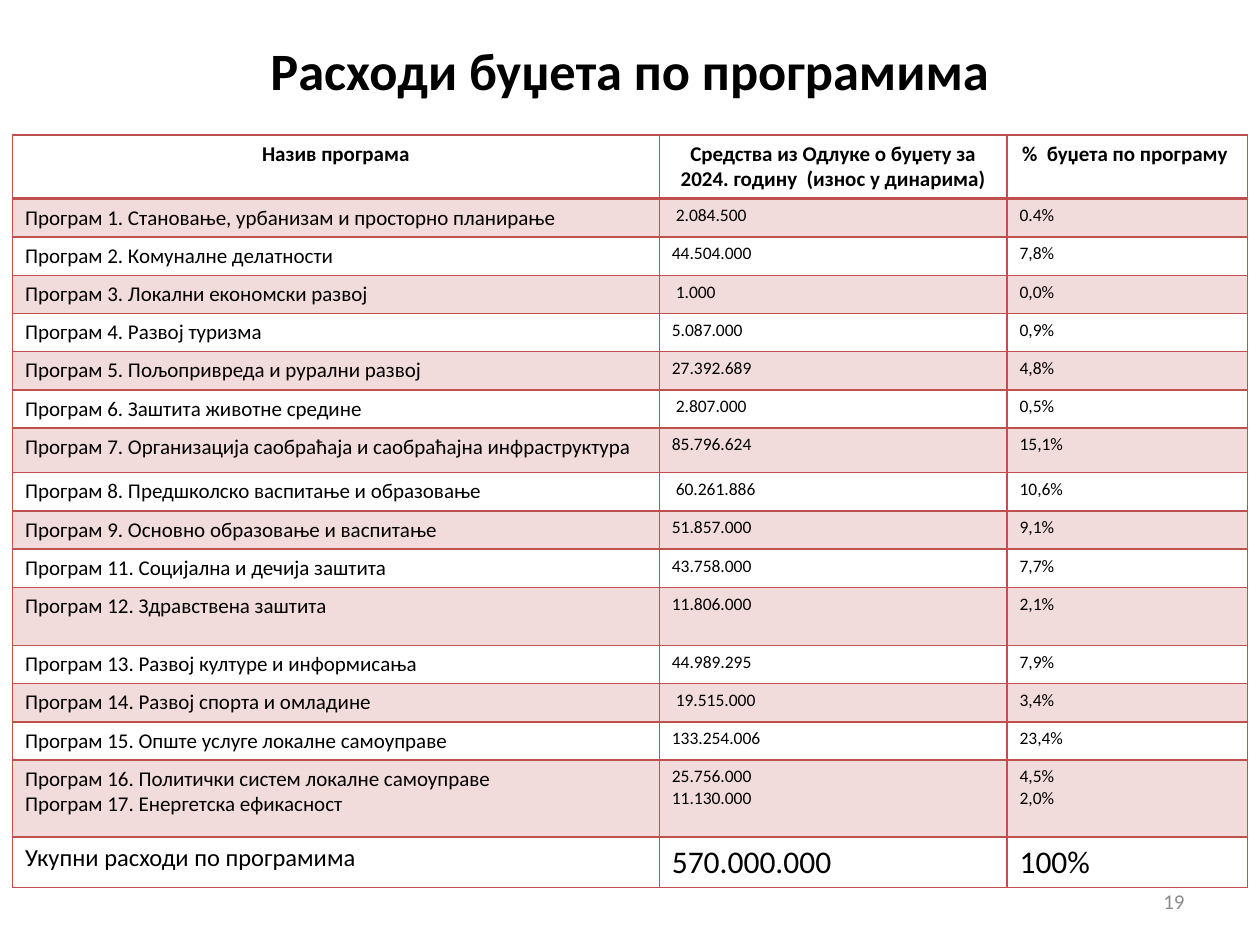
import dataclasses

import pptx
import pptx.dml.color
import pptx.enum.text
import pptx.oxml
import pptx.oxml.ns
import pptx.presentation
import pptx.slide
import pptx.table
import pptx.text.text
import pptx.util

Cm = pptx.util.Cm
Pt = pptx.util.Pt
Align = pptx.enum.text.PP_ALIGN
Anchor = pptx.enum.text.MSO_ANCHOR


@dataclasses.dataclass(frozen=True)
class Theme:
    font: str = "Calibri"
    text: str = "000000"
    muted: str = "8C8C8C"
    accent: str = "C0504D"
    band_opacity: int = 20
    title_size: float = 30
    label_size: float = 12
    amount_size: float = 10
    total_label_size: float = 14
    total_amount_size: float = 18
    line: float = 1
    header_line: float = 2


@dataclasses.dataclass(frozen=True)
class BudgetRow:
    name: str
    amount: str
    share: str
    height: float = 0.77


THEME = Theme()
COLUMN_WIDTHS = (13.04, 7.01, 4.85)

HEADER = BudgetRow(
    "Назив програма",
    "Средства из Одлуке о буџету за 2024. годину  (износ у динарима)",
    "%  буџета по програму ",
    1.29,
)
PROGRAMS = (
    BudgetRow("Програм 1. Становање, урбанизам и просторно планирање", " 2.084.500", "0.4%"),
    BudgetRow("Програм 2. Комуналне делатности", "44.504.000", "7,8%"),
    BudgetRow("Програм 3. Локални економски развој", " 1.000", "0,0%"),
    BudgetRow("Програм 4. Развој туризма", "5.087.000", "0,9%"),
    BudgetRow("Програм 5. Пољопривреда и рурални развој", "27.392.689", "4,8%"),
    BudgetRow("Програм 6. Заштита животне средине", " 2.807.000", "0,5%"),
    BudgetRow("Програм 7. Организација саобраћаја и саобраћајна инфраструктура",
              "85.796.624", "15,1%", 0.9),
    BudgetRow("Програм 8. Предшколско васпитање и образовање", " 60.261.886", "10,6%"),
    BudgetRow("Програм 9. Основно образовање и васпитање", "51.857.000", "9,1%"),
    BudgetRow("Програм 11. Социјална и дечија заштита", "43.758.000", "7,7%"),
    BudgetRow("Програм 12. Здравствена заштита", "11.806.000", "2,1%", 1.17),
    BudgetRow("Програм 13. Развој културе и информисања", "44.989.295", "7,9%"),
    BudgetRow("Програм 14. Развој спорта и омладине", " 19.515.000", "3,4%"),
    BudgetRow("Програм 15. Опште услуге локалне самоуправе", "133.254.006", "23,4%"),
    BudgetRow("Програм 16. Политички систем локалне самоуправе\nПрограм 17. Енергетска ефикасност",
              "25.756.000\n11.130.000", "4,5%\n2,0%", 1.55),
)
TOTAL = BudgetRow("Укупни расходи по програмима", "570.000.000", "100%", 1.02)


def write_text(frame: pptx.text.text.TextFrame, text: str, size: float,
               color: str = THEME.text, bold: bool = False,
               align: Align = Align.LEFT) -> None:
    frame.text = text
    for paragraph in frame.paragraphs:
        paragraph.alignment = align
        paragraph.font.name = THEME.font
        paragraph.font.size = Pt(size)
        paragraph.font.bold = bold
        paragraph.font.color.rgb = pptx.dml.color.RGBColor.from_string(color)


def draw_borders(cell: pptx.table._Cell, top: float, bottom: float) -> None:
    """Border the cell in the accent colour; widths are in points."""
    properties = cell._tc.get_or_add_tcPr()
    widths = {"lnL": THEME.line, "lnR": THEME.line, "lnT": top, "lnB": bottom}
    for side, width in widths.items():
        properties.append(pptx.oxml.parse_xml(
            f'<a:{side} {pptx.oxml.ns.nsdecls("a")} w="{Pt(width)}"><a:solidFill>'
            f'<a:srgbClr val="{THEME.accent}"/></a:solidFill></a:{side}>'))


def fill_cell(cell: pptx.table._Cell, banded: bool) -> None:
    if not banded:
        cell.fill.background()
        return
    cell.fill.solid()
    cell.fill.fore_color.rgb = pptx.dml.color.RGBColor.from_string(THEME.accent)
    color = cell._tc.tcPr.find(
        f'{pptx.oxml.ns.qn("a:solidFill")}/{pptx.oxml.ns.qn("a:srgbClr")}')
    color.append(pptx.oxml.parse_xml(
        f'<a:alpha {pptx.oxml.ns.nsdecls("a")} val="{THEME.band_opacity * 1000}"/>'))


def add_title(slide: pptx.slide.Slide) -> None:
    title = slide.shapes.title
    title.left, title.top, title.width, title.height = Cm(1.88), Cm(0.33), Cm(21.64), Cm(2.16)
    write_text(title.text_frame, "Расходи буџета по програмима", THEME.title_size,
               bold=True, align=Align.CENTER)
    title.text_frame.vertical_anchor = Anchor.MIDDLE


def add_budget_table(slide: pptx.slide.Slide) -> None:
    rows = (HEADER, *PROGRAMS, TOTAL)
    table = slide.shapes.add_table(
        len(rows), len(COLUMN_WIDTHS), Cm(0.25), Cm(2.72),
        Cm(sum(COLUMN_WIDTHS)), Cm(sum(row.height for row in rows))).table
    table.first_row = table.horz_banding = False
    for column, width in zip(table.columns, COLUMN_WIDTHS):
        column.width = Cm(width)

    for index, row in enumerate(rows):
        table.rows[index].height = Cm(row.height)
        is_header = row is HEADER
        if is_header:
            name_size = value_size = THEME.label_size
        elif row is TOTAL:
            name_size, value_size = THEME.total_label_size, THEME.total_amount_size
        else:
            name_size, value_size = THEME.label_size, THEME.amount_size
        contents = ((row.name, name_size), (row.amount, value_size), (row.share, value_size))
        for cell, (text, size) in zip(table.rows[index].cells, contents):
            write_text(cell.text_frame, text, size, bold=is_header,
                       align=Align.CENTER if is_header else Align.LEFT)
            draw_borders(cell,
                         top=THEME.header_line if index == 1 else THEME.line,
                         bottom=THEME.header_line if is_header else THEME.line)
            fill_cell(cell, banded=index % 2 == 1)


def add_page_number(slide: pptx.slide.Slide) -> None:
    box = slide.shapes.add_textbox(Cm(18.21), Cm(17.65), Cm(5.92), Cm(1.02))
    box.text_frame.word_wrap = True
    box.text_frame.vertical_anchor = Anchor.MIDDLE
    write_text(box.text_frame, "19", THEME.label_size, THEME.muted, align=Align.RIGHT)


def main() -> None:
    deck = pptx.Presentation()
    deck.slide_width, deck.slide_height = Cm(25.4), Cm(19.05)
    title_only = deck.slide_layouts.get_by_name("Title Only")
    slide = deck.slides.add_slide(title_only)
    add_title(slide)
    add_page_number(slide)
    add_budget_table(slide)
    deck.save("out.pptx")


if __name__ == "__main__":
    main()
